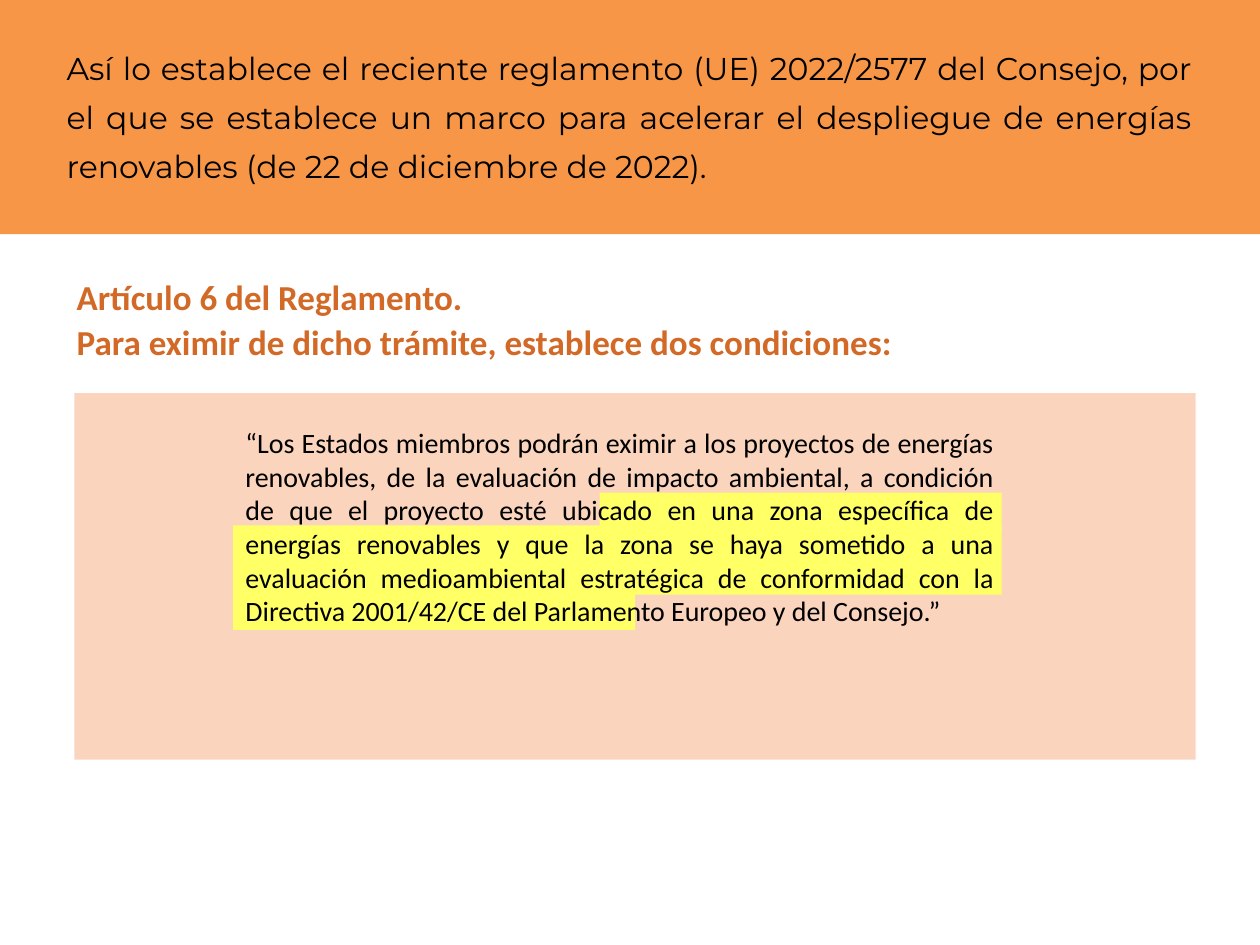
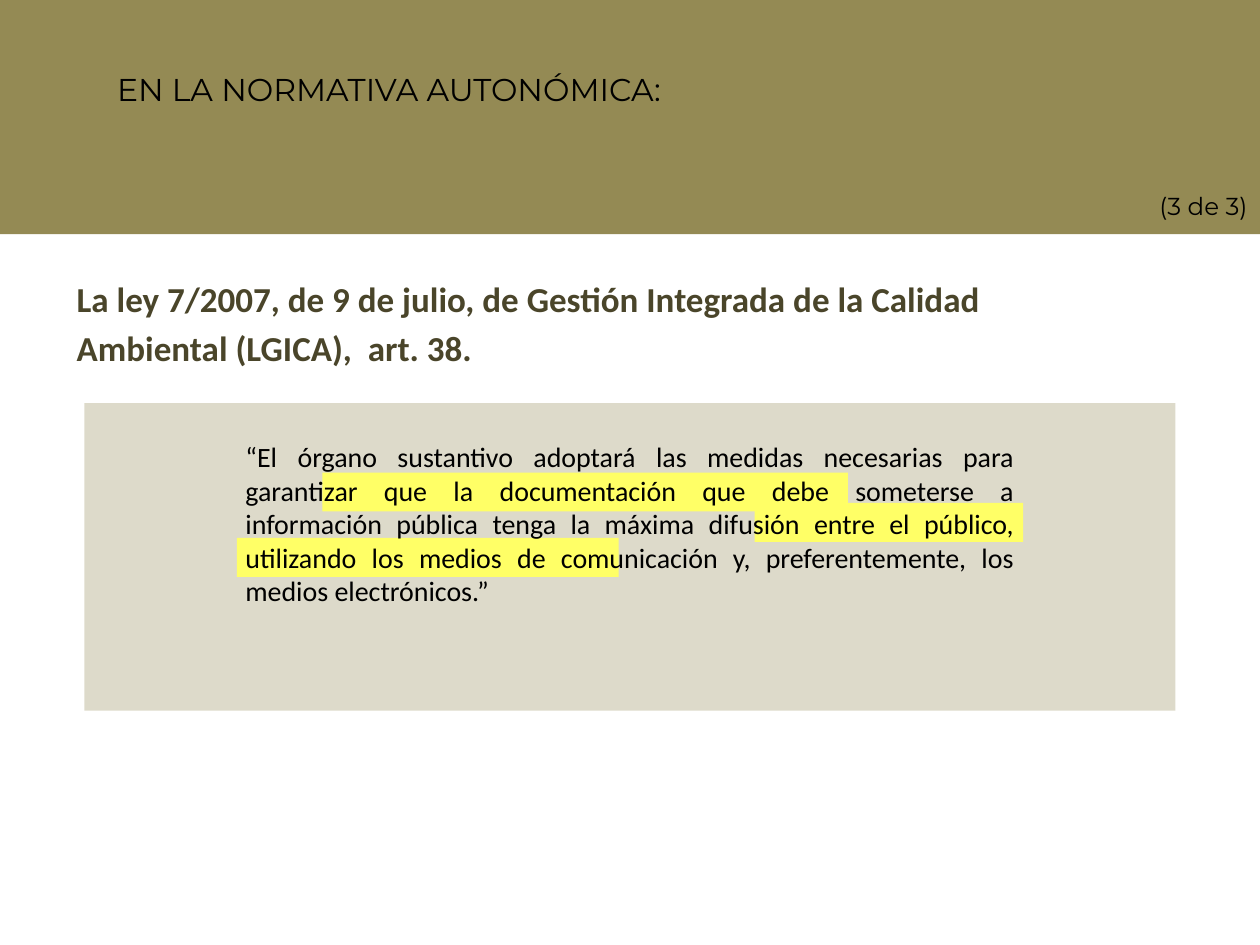
"""Build two slides on the rules that govern environmental assessment."""
from dataclasses import dataclass
from typing import Optional, Union

from lxml.etree import SubElement
from pptx import Presentation
from pptx.dml.color import RGBColor
from pptx.enum.shapes import MSO_SHAPE
from pptx.enum.text import MSO_AUTO_SIZE, PP_ALIGN
from pptx.oxml.ns import qn
from pptx.slide import Slide
from pptx.util import Length, Pt

COLORS = {
    "black": "000000",
    "highlight": "FFFF66",
    "orange_band": "F79646",
    "orange_panel": "EF772D",
    "orange_heading": "D36927",
    "olive": "948A54",
    "olive_heading": "4A452A",
}
TITLE_FONT = "Montserrat"
BODY_FONT = "Calibri"
PANEL_OPACITY = 31
MARK_HEIGHT = 22.3


@dataclass(frozen=True)
class Area:
    left: float
    top: float
    width: float
    height: float

    def lengths(self) -> list[Length]:
        return [Pt(side) for side in (self.left, self.top, self.width, self.height)]


@dataclass(frozen=True)
class Block:
    text: str
    area: Area
    align: PP_ALIGN = PP_ALIGN.LEFT
    spacing: Union[float, Length, None] = None


@dataclass(frozen=True)
class ArticlePage:
    band_color: str
    panel_color: str
    heading_color: str
    panel: Area
    title: Block
    heading: Block
    quote: Block
    marks: tuple[Area, ...]
    counter: Optional[Block] = None


BAND = Area(0, 0, 720, 133.9)

PAGES = (
    ArticlePage(
        band_color="orange_band",
        panel_color="orange_panel",
        heading_color="orange_heading",
        panel=Area(42.5, 224.6, 640.8, 209.5),
        title=Block(
            "Así lo establece el reciente reglamento (UE) 2022/2577 del Consejo, "
            "por el que se establece un marco para acelerar el despliegue de "
            "energías renovables (de 22 de diciembre de 2022).",
            Area(31, 18, 657.4, 120.2), PP_ALIGN.JUSTIFY, Pt(28),
        ),
        heading=Block(
            "Artículo 6 del Reglamento.\n"
            "Para eximir de dicho trámite, establece dos condiciones:",
            Area(36.7, 151.9, 640.8, 84.2), spacing=Pt(26),
        ),
        quote=Block(
            "“Los Estados miembros podrán eximir a los proyectos de energías "
            "renovables, de la evaluación de impacto ambiental, a condición de que "
            "el proyecto esté ubicado en una zona específica de energías renovables "
            "y que la zona se haya sometido a una evaluación medioambiental "
            "estratégica de conformidad con la Directiva 2001/42/CE del Parlamento "
            "Europeo y del Consejo.”",
            Area(133.2, 239.8, 442.1, 162.7), PP_ALIGN.JUSTIFY,
        ),
        marks=(
            Area(342.7, 281.5, 229.7, MARK_HEIGHT),
            Area(133.2, 300.2, 439.2, 39.6),
            Area(133.2, 337.7, 229.7, MARK_HEIGHT),
        ),
    ),
    ArticlePage(
        band_color="olive",
        panel_color="olive",
        heading_color="olive_heading",
        panel=Area(48.2, 230.4, 623.5, 175.7),
        title=Block("EN LA NORMATIVA AUTONÓMICA:", Area(59.8, 25.9, 396.7, 40.3), spacing=1.5),
        heading=Block(
            "La ley 7/2007, de 9 de julio, de Gestión Integrada de la Calidad "
            "Ambiental (LGICA),  art. 38.",
            Area(36.7, 151.2, 555.8, 61.9), spacing=Pt(28),
        ),
        quote=Block(
            "“El órgano sustantivo adoptará las medidas necesarias para garantizar "
            "que la documentación que debe someterse a información pública tenga la "
            "máxima difusión entre el público, utilizando los medios de comunicación "
            "y, preferentemente, los medios electrónicos.”",
            Area(133.2, 247.7, 453.6, 143.3), PP_ALIGN.JUSTIFY,
        ),
        marks=(
            Area(184.3, 270, 300.2, MARK_HEIGHT),
            Area(431.3, 287.3, 153.4, MARK_HEIGHT),
            Area(135.4, 307.4, 218.2, MARK_HEIGHT),
        ),
        counter=Block("(3 de 3)", Area(640.8, 105.8, 79.2, 24.5), PP_ALIGN.RIGHT),
    ),
)


def add_rectangle(page: Slide, area: Area, color: str, opacity: int = 100) -> None:
    box = page.shapes.add_shape(MSO_SHAPE.RECTANGLE, *area.lengths())
    box.shadow.inherit = False
    box.line.fill.background()
    box.fill.solid()
    box.fill.fore_color.rgb = RGBColor.from_string(COLORS[color])
    if opacity < 100:
        color_element = box.fill._xPr.find(qn("a:solidFill"))[0]
        SubElement(color_element, qn("a:alpha"), val=str(opacity * 1000))


def add_text(page: Slide, block: Block, *, font: str, size: float,
             color: str = "black", bold: bool = False) -> None:
    frame = page.shapes.add_textbox(*block.area.lengths()).text_frame
    frame.word_wrap = True
    frame.auto_size = MSO_AUTO_SIZE.SHAPE_TO_FIT_TEXT
    frame.text = block.text
    for para in frame.paragraphs:
        para.alignment = block.align
        para.line_spacing = block.spacing
        for span in para.runs:
            span.font.name = font
            span.font.size = Pt(size)
            span.font.bold = bold
            span.font.color.rgb = RGBColor.from_string(COLORS[color])


def draw_page(page: Slide, content: ArticlePage) -> None:
    add_rectangle(page, content.panel, content.panel_color, PANEL_OPACITY)
    add_rectangle(page, BAND, content.band_color)
    add_text(page, content.title, font=TITLE_FONT, size=18)
    if content.counter:
        add_text(page, content.counter, font=TITLE_FONT, size=14)
    add_text(page, content.heading, font=BODY_FONT, size=20,
             color=content.heading_color, bold=True)
    for mark in content.marks:
        add_rectangle(page, mark, "highlight")
    add_text(page, content.quote, font=BODY_FONT, size=16)


def main() -> None:
    deck = Presentation()
    deck.slide_width, deck.slide_height = Pt(720), Pt(540)
    blank_layout = deck.slide_layouts[6]
    for content in PAGES:
        draw_page(deck.slides.add_slide(blank_layout), content)
    deck.save("out.pptx")


if __name__ == "__main__":
    main()
